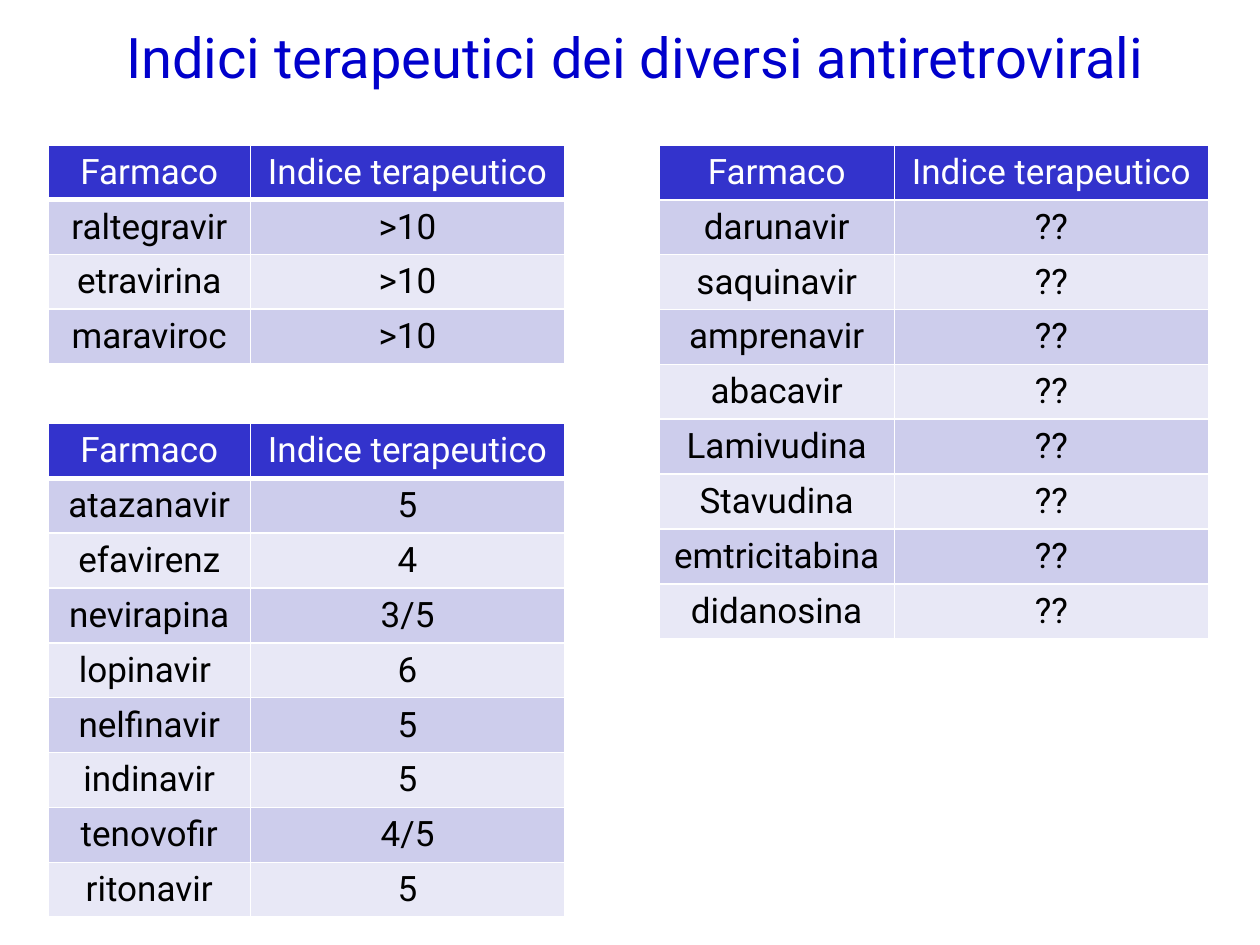
from pptx import Presentation
from pptx.dml.color import RGBColor
from pptx.enum.text import MSO_ANCHOR as Anchor, MSO_AUTO_SIZE as AutoSize, PP_ALIGN as Align
from pptx.oxml.ns import qn
from pptx.util import Inches, Pt
from lxml.etree import SubElement

# Content
TITLE = "Indici terapeutici dei diversi antiretrovirali"
HEADER = ("Farmaco", "Indice terapeutico")
LOW_INDEX = [
    ("atazanavir", "5"), ("efavirenz", "4"), ("nevirapina", "3/5"), ("lopinavir ", "6"),
    ("nelfinavir", "5"), ("indinavir", "5"), ("tenovofir", "4/5"), ("ritonavir", "5"),
]
HIGH_INDEX = [(drug, ">10") for drug in ("raltegravir", "etravirina", "maraviroc")]
UNKNOWN_INDEX = [(drug, "??") for drug in (
    "darunavir", "saquinavir", "amprenavir", "abacavir",
    "Lamivudina", "Stavudina", "emtricitabina", "didanosina")]

# Rows, left, top, drug column width, table height, rule under the header in points
TABLES = [
    (LOW_INDEX, 0.38, 3.36, 1.61, 3.92, 3),
    (HIGH_INDEX, 0.38, 1.15, 1.61, 1.74, 3),
    (UNKNOWN_INDEX, 5.23, 1.15, 1.87, 3.92, 1),
]
INDEX_WIDTH = 2.49

# Style
FONT = "Roboto"
COLORS = {"title": "0000CC", "header": "3333CC", "odd": "CDCDEC", "even": "E8E8F6",
          "white": "FFFFFF", "text": "000000"}


def rgb(name):
    return RGBColor.from_string(COLORS[name])


def add_text(paragraph, text, size, color):
    run = paragraph.add_run()
    run.text = text
    run.font.name = FONT
    run.font.size = Pt(size)
    run.font.bold = False
    run.font.color.rgb = rgb(color)


def add_borders(cell, top, bottom):
    properties = cell._tc.get_or_add_tcPr()
    for side, width in (("L", 1), ("R", 1), ("T", top), ("B", bottom)):
        line = SubElement(properties, qn(f"a:ln{side}"), w=str(Pt(width)))
        fill = SubElement(line, qn("a:solidFill"))
        SubElement(fill, qn("a:srgbClr"), val=COLORS["white"])


def add_drug_table(slide, drugs, left, top, drug_width, height, header_rule):
    rows = [HEADER] + drugs
    widths = (drug_width, INDEX_WIDTH)
    table = slide.shapes.add_table(len(rows), len(widths), Inches(left), Inches(top),
                                   Inches(sum(widths)), Inches(height)).table
    for column, width in zip(table.columns, widths):
        column.width = Inches(width)
    for number, values in enumerate(rows):
        table.rows[number].height = Inches(height / len(rows))
        band = "header" if number == 0 else "odd" if number % 2 else "even"
        for column, value in enumerate(values):
            cell = table.cell(number, column)
            cell.vertical_anchor = Anchor.MIDDLE
            add_borders(cell, header_rule if number == 1 else 1,
                        header_rule if number == 0 else 1)
            cell.fill.solid()
            cell.fill.fore_color.rgb = rgb(band)
            paragraph = cell.text_frame.paragraphs[0]
            paragraph.alignment = Align.CENTER
            add_text(paragraph, value, 20, "white" if number == 0 else "text")


def main():
    presentation = Presentation()
    presentation.slide_width, presentation.slide_height = Inches(10), Inches(7.5)
    slide = presentation.slides.add_slide(presentation.slide_layouts[5])

    # Title
    title = slide.shapes.title
    title.left, title.top = Inches(0.9), Inches(0.13)
    title.width, title.height = Inches(8.78), Inches(0.63)
    frame = title.text_frame
    frame.word_wrap = True
    frame.auto_size = AutoSize.SHAPE_TO_FIT_TEXT
    frame.vertical_anchor = Anchor.TOP
    frame.paragraphs[0].alignment = Align.LEFT
    add_text(frame.paragraphs[0], TITLE, 32, "title")

    # Drug tables
    for table in TABLES:
        add_drug_table(slide, *table)

    presentation.save("out.pptx")


if __name__ == "__main__":
    main()
